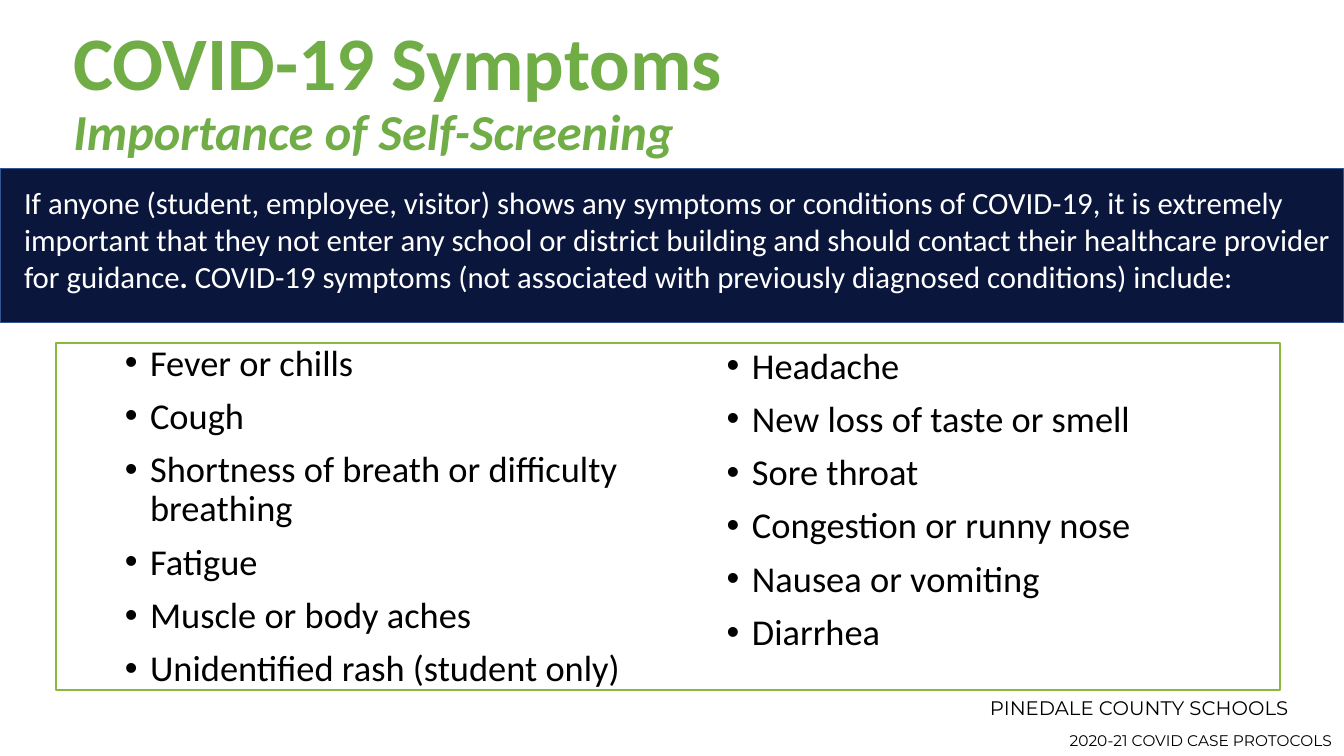
"""Build the COVID-19 symptoms slide."""
from lxml import etree
from pptx import Presentation, util as u
from pptx.dml import color
from pptx.enum import shapes, text
from pptx.oxml import ns

COLORS = {
    "navy": "0B163C",
    "navy_edge": "325491",
    "green": "70AD47",
    "frame": "8AB940",
    "black": "000000",
    "white": "FFFFFF",
}
EARLY_SYMPTOMS = [
    "Fever or chills",
    "Cough",
    "Shortness of breath or difficulty breathing",
    "Fatigue",
    "Muscle or body aches",
    "Unidentified rash (student only)",
]
OTHER_SYMPTOMS = [
    "Headache",
    "New loss of taste or smell",
    "Sore throat",
    "Congestion or runny nose",
    "Nausea or vomiting",
    "Diarrhea",
]
GUIDANCE = (
    "If anyone (student, employee, visitor) shows any symptoms or conditions "
    "of COVID-19, it is extremely important that they not enter any school or "
    "district building and should contact their healthcare provider for guidance"
)
INCLUDES = (
    " COVID-19 symptoms (not associated with previously diagnosed conditions) include:"
)


def rgb(name):
    """Return the named palette colour."""
    return color.RGBColor.from_string(COLORS[name])


def add_box(s, at, line, width, fill=None):
    """Add an outlined rectangle, filled when a colour is named."""
    sp = s.shapes.add_shape(shapes.MSO_SHAPE.RECTANGLE, *map(u.Inches, at))
    sp.shadow.inherit = False
    if fill:
        sp.fill.solid()
        sp.fill.fore_color.rgb = rgb(fill)
    else:
        sp.fill.background()
    sp.line.color.rgb = rgb(line)
    sp.line.width = u.Pt(width)


def add_text(s, at, anchor=text.MSO_ANCHOR.TOP):
    """Add a wrapping text box and return its text frame."""
    tf = s.shapes.add_textbox(*map(u.Inches, at)).text_frame
    tf.word_wrap = True
    tf.vertical_anchor = anchor
    return tf


def add_run(p, words, size, ink, name="Calibri", **formats):
    """Append a formatted run to a paragraph."""
    r = p.add_run()
    r.text = words
    r.font.color.rgb = rgb(ink)
    for key, value in {"size": u.Pt(size), "name": name, **formats}.items():
        setattr(r.font, key, value)


def add_bullet(p):
    """Give a paragraph a round bullet with a hanging indent."""
    pPr = p._p.get_or_add_pPr()
    pPr.set("marL", str(u.Inches(0.25)))
    pPr.set("indent", str(-u.Inches(0.25)))
    etree.SubElement(pPr, ns.qn("a:buFont")).set("typeface", "Arial")
    etree.SubElement(pPr, ns.qn("a:buChar")).set("char", "•")


def add_symptoms(s, at, symptoms):
    """Add a bulleted column of symptoms."""
    tf = add_text(s, at)
    for i, symptom in enumerate(symptoms):
        p = tf.add_paragraph() if i else tf.paragraphs[0]
        for key, value in {"line_spacing": 0.9, "space_before": u.Pt(10)}.items():
            setattr(p, key, value)
        add_bullet(p)
        add_run(p, symptom, 26, "black")


def add_title(s):
    """Add the two-line heading."""
    p = add_text(s, (0.63, 0.2, 11.5, 1.45), text.MSO_ANCHOR.MIDDLE).paragraphs[0]
    p.line_spacing = 0.9
    add_run(p, "COVID-19 Symptoms", 54, "green", bold=True)
    p.add_line_break()
    add_run(p, "Importance of Self-Screening", 36, "green", bold=True, italic=True)


def add_guidance(s):
    """Add the banner with its guidance text."""
    add_box(s, (0, 1.67, 13.33, 1.53), "navy_edge", 1, "navy")
    p = add_text(s, (0.14, 1.77, 13.33, 1.21)).paragraphs[0]
    for words, bold in ((GUIDANCE, False), (".", True), (INCLUDES, False)):
        add_run(p, words, 22, "white", bold=bold)


def add_footer(s, at, words, size):
    """Add one footer line."""
    add_run(add_text(s, at).paragraphs[0], words, size, "black", "Montserrat")


def main():
    """Build and save the slide."""
    prs = Presentation()
    prs.slide_width, prs.slide_height = u.Inches(13.33), u.Inches(7.5)
    s = prs.slides.add_slide(prs.slide_layouts[6])
    add_title(s)
    add_guidance(s)
    add_symptoms(s, (1.14, 3.37, 5.67, 3.83), EARLY_SYMPTOMS)
    add_symptoms(s, (7.11, 3.4, 5.67, 3.27), OTHER_SYMPTOMS)
    add_box(s, (0.56, 3.4, 12.14, 3.45), "frame", 1.5)
    add_footer(s, (9.72, 6.86, 4.2, 0.34), "PINEDALE COUNTY SCHOOLS", 14)
    add_footer(s, (10.51, 7.2, 4.2, 0.29), "2020-21 COVID CASE PROTOCOLS", 11)
    prs.save("out.pptx")


if __name__ == "__main__":
    main()
